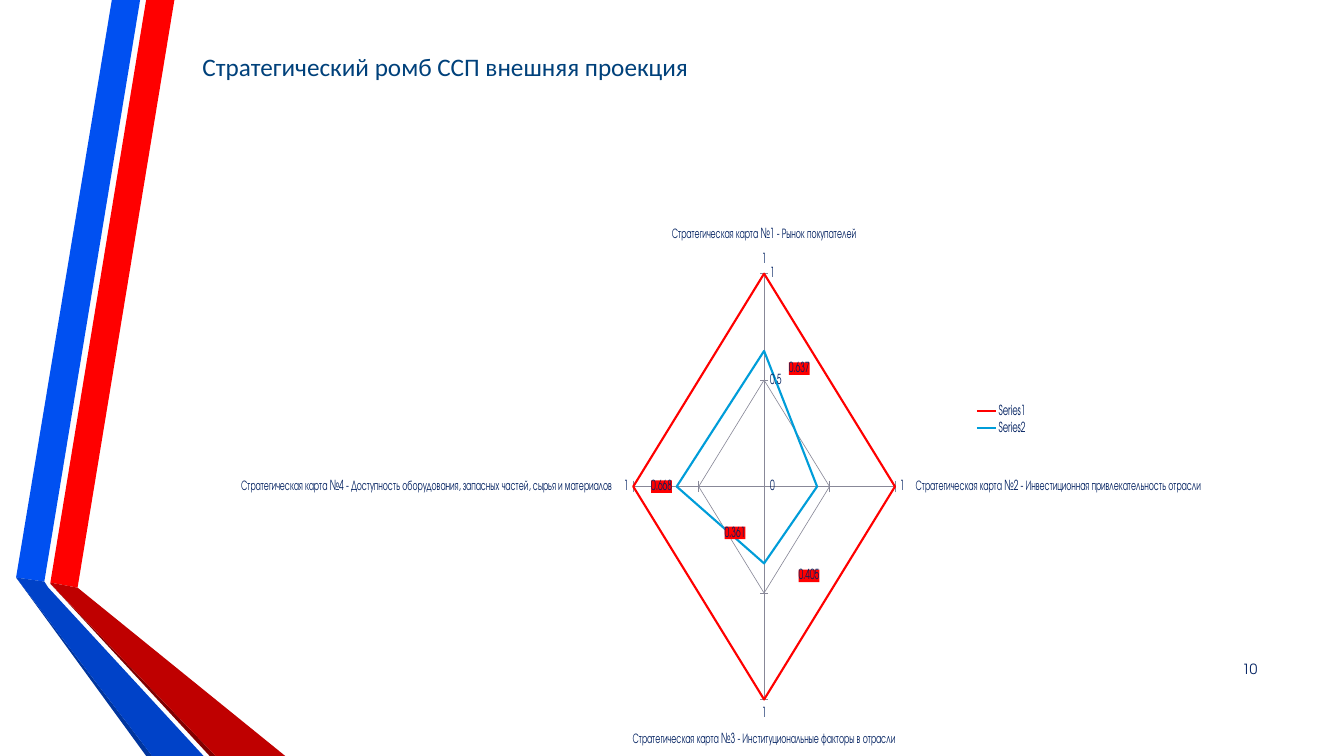
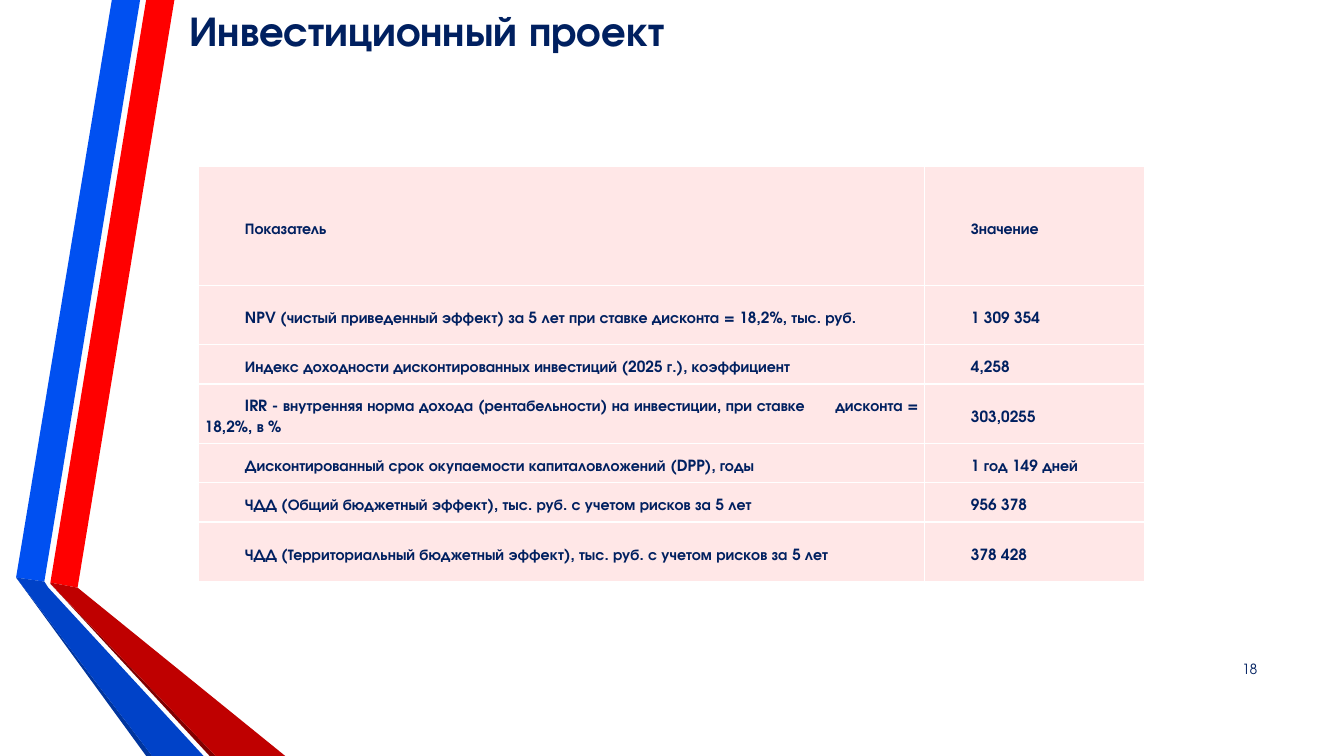
"""Build two slides: a strategic radar chart and an investment table."""
from copy import deepcopy

from pptx import Presentation
from pptx.chart.data import CategoryChartData
from pptx.dml.color import RGBColor
from pptx.enum.chart import XL_CHART_TYPE as ChartType
from pptx.enum.chart import XL_LEGEND_POSITION as LegendPosition
from pptx.enum.chart import XL_TICK_MARK as TickMark
from pptx.enum.text import MSO_ANCHOR as Anchor
from pptx.enum.text import PP_ALIGN as Align
from pptx.oxml import parse_xml
from pptx.oxml.ns import nsdecls, qn
from pptx.util import Inches, Pt

NAVY = RGBColor(0x00, 0x20, 0x60)
TITLE_BLUE = RGBColor(0x00, 0x41, 0x7B)
WHITE = RGBColor(0xFF, 0xFF, 0xFF)
PINK = RGBColor(0xFF, 0xE7, 0xE7)
GRID_GRAY = RGBColor(0x88, 0x88, 0x98)
RED = RGBColor(0xFF, 0x00, 0x00)
SKY = RGBColor(0x00, 0x9D, 0xD9)
BLUE = RGBColor(0x00, 0x50, 0xF1)
BLUE_EDGE = RGBColor(0x00, 0x35, 0x9E)
BLUE_FOLD = RGBColor(0x00, 0x42, 0xC8)
RED_EDGE = RGBColor(0x80, 0x00, 0x00)
RED_FOLD = RGBColor(0xBF, 0x00, 0x00)
FONT = "TeX Gyre Adventor"

RIBBONS = [
    (RED, [(0.5, 5.78), (0.77, 5.83), (1.73, 0), (1.45, 0)]),
    (BLUE, [(1.39, 0), (1.11, 0), (0.16, 5.73), (0.44, 5.77)]),
    (BLUE_EDGE, [(0.16, 5.73), (1.45, 7.5), (1.51, 7.5)]),
    (RED_EDGE, [(0.5, 5.79), (2.08, 7.5), (2.14, 7.5)]),
    (RED_FOLD, [(0.5, 5.79), (2.14, 7.5), (2.83, 7.5), (0.77, 5.83), (0.5, 5.78)]),
    (BLUE_FOLD, [(2.02, 7.5), (0.48, 5.83), (0.44, 5.77), (0.16, 5.73), (1.51, 7.5)]),
]

CATEGORIES = [
    "Стратегическая карта №1 - Рынок покупателей",
    "Стратегическая карта №2 - Инвестиционная привлекательность отрасли",
    "Стратегическая карта №3 - Институциональные факторы в отрасли",
    "Стратегическая карта №4 - Доступность оборудования, запасных частей, сырья и материалов",
]
SERIES = [
    ("Series1", RED, "General", [1, 1, 1, 1]),
    ("Series2", SKY, "0.000", [0.637, 0.405, 0.361, 0.668]),
]
PLOT_AREA = {"x": 0.315, "y": 0.236, "w": 0.448, "h": 0.79}
LABEL_OFFSETS = [(0.06, 0.05), (-0.04, 0.14), (-0.05, -0.07)]

COLUMN_WIDTHS = [7.2, 2.18]
ROW_UNIT = 0.59
TABLE_ROWS = [
    (2 * ROW_UNIT, "Показатель", "Значение"),
    (ROW_UNIT, "NPV (чистый приведенный эффект) за 5 лет при ставке дисконта = 18,2%, тыс. руб.",
     "1 309 354"),
    (0.39, "Индекс доходности дисконтированных инвестиций (2025 г.), коэффициент", "4,258"),
    (ROW_UNIT, "IRR - внутренняя норма дохода (рентабельности) на инвестиции, при ставке"
     "\tдисконта = 18,2%, в %", "303,0255"),
    (0.39, "Дисконтированный срок окупаемости капиталовложений (DPP), годы", "1 год 149 дней"),
    (0.39, "ЧДД (Общий бюджетный эффект), тыс. руб. с учетом рисков за 5 лет", "956 378"),
    (ROW_UNIT, "ЧДД (Территориальный бюджетный эффект), тыс. руб. с учетом рисков за 5 лет",
     "378 428"),
]
WIDE_GAP = 18


def write_text(frame, text, size=11, font=FONT, color=NAVY, bold=False,
               align=Align.LEFT, anchor=Anchor.TOP, spacing=None, indent=0):
    frame.word_wrap = True
    frame.vertical_anchor = anchor
    paragraph = frame.paragraphs[0]
    paragraph.alignment = align
    if spacing:
        paragraph.line_spacing = spacing
    if indent:
        properties = paragraph._p.get_or_add_pPr()
        properties.set("marL", "0")
        properties.set("indent", str(Inches(indent)))
    before, gap, after = text.partition("\t")
    for part in filter(None, (before, gap, after)):
        run = paragraph.add_run()
        run.text = part.replace("\t", " ")
        run.font.name = font
        run.font.size = Pt(size)
        run.font.bold = bold
        run.font.color.rgb = color
        if part == "\t":
            run._r.get_or_add_rPr().set("spc", str(WIDE_GAP * 100))


def add_text(slide, text, box, **text_format):
    shape = slide.shapes.add_textbox(*map(Inches, box))
    write_text(shape.text_frame, text, **text_format)


def add_slide(presentation, title, title_box, number, **title_format):
    slide = presentation.slides.add_slide(presentation.slide_layouts[6])
    for color, points in RIBBONS:
        start, *corners = [(Inches(x), Inches(y)) for x, y in points]
        builder = slide.shapes.build_freeform(*start)
        builder.add_line_segments(corners, close=True)
        shape = builder.convert_to_shape()
        shape.shadow.inherit = False
        shape.fill.solid()
        shape.fill.fore_color.rgb = color
        shape.line.fill.background()
    add_text(slide, title, title_box, **title_format)
    add_text(slide, number, (11.97, 6.44, 0.6, 0.4), size=10,
             align=Align.RIGHT, anchor=Anchor.MIDDLE)
    return slide


def manual_layout(values, inner=False):
    target = '<c:layoutTarget val="inner"/>' if inner else ""
    modes = '<c:xMode val="edge"/><c:yMode val="edge"/>' if inner else ""
    sizes = "".join(f'<c:{key} val="{value}"/>' for key, value in values.items())
    return parse_xml(f'<c:layout {nsdecls("c")}><c:manualLayout>{target}{modes}{sizes}'
                     '</c:manualLayout></c:layout>')


def highlight_labels(labels):
    label_list = labels._element
    label_list.find(qn("c:txPr")).addprevious(parse_xml(
        f'<c:spPr {nsdecls("c", "a")}><a:solidFill><a:srgbClr val="{RED}"/>'
        '</a:solidFill></c:spPr>'))
    for leader in label_list.findall(qn("c:showLeaderLines")):
        label_list.remove(leader)
    shared = list(label_list)
    label_list.append(parse_xml(f'<c:showLeaderLines {nsdecls("c")} val="0"/>'))
    extension_space = "http://schemas.microsoft.com/office/drawing/2012/chart"
    label_list.append(parse_xml(
        f'<c:extLst {nsdecls("c")}><c:ext uri="{{CE6537A1-D6FC-4f65-9D91-7224C49458BB}}">'
        f'<c15:showLeaderLines xmlns:c15="{extension_space}" val="0"/></c:ext></c:extLst>'))
    for index, (x, y) in enumerate(LABEL_OFFSETS):
        label = parse_xml(f'<c:dLbl {nsdecls("c")}><c:idx val="{index}"/></c:dLbl>')
        label.append(manual_layout({"x": x, "y": y}))
        label.extend(deepcopy(part) for part in shared)
        label_list.insert(index, label)


def style_font(font):
    font.name = FONT
    font.size = Pt(10)
    font.color.rgb = NAVY


def add_radar(slide):
    data = CategoryChartData()
    data.categories = CATEGORIES
    for name, _, _, values in SERIES:
        data.add_series(name, values)
    box = map(Inches, (2.39, 1, 9.54, 6.4))
    chart = slide.shapes.add_chart(ChartType.RADAR, *box, data).chart
    style_font(chart.font)
    chart.has_title = False
    chart.has_legend = True
    chart.legend.position = LegendPosition.RIGHT
    chart.legend.include_in_layout = False
    style_font(chart.legend.font)
    chart.plots[0].vary_by_categories = False

    plot_area = chart._chartSpace.chart.plotArea
    for layout in plot_area.findall(qn("c:layout")):
        plot_area.remove(layout)
    plot_area.insert(0, manual_layout(PLOT_AREA, inner=True))

    ticks = (TickMark.OUTSIDE, TickMark.CROSS)
    for axis, tick in zip((chart.category_axis, chart.value_axis), ticks):
        axis.major_tick_mark = tick
        axis.has_major_gridlines = True
        for line in (axis.major_gridlines.format.line, axis.format.line):
            line.color.rgb = GRID_GRAY
            line.width = Pt(0.75)
        style_font(axis.tick_labels.font)
    chart.value_axis.minimum_scale = 0
    chart.value_axis.maximum_scale = 1
    chart.value_axis.major_unit = 0.5
    chart.value_axis.tick_labels.number_format = "General"
    chart.value_axis.tick_labels.number_format_is_linked = False

    for series, (_, color, number_format, _) in zip(chart.plots[0].series, SERIES):
        series.smooth = False
        series.format.line.color.rgb = color
        series.format.line.width = Pt(2.5)
        labels = series.data_labels
        labels.show_value = True
        labels.number_format = number_format
        labels.number_format_is_linked = False
        style_font(labels.font)
    highlight_labels(labels)


def style_cell(cell):
    cell.fill.solid()
    cell.fill.fore_color.rgb = PINK
    cell.margin_left = cell.margin_right = Inches(0.06)
    cell.margin_top = Inches(0.01)
    cell.margin_bottom = 0
    cell.vertical_anchor = Anchor.MIDDLE
    properties = cell._tc.get_or_add_tcPr()
    for index, side in enumerate(("lnL", "lnR", "lnT", "lnB")):
        properties.insert(index, parse_xml(
            f'<a:{side} {nsdecls("a")} w="{Pt(1)}"><a:solidFill>'
            f'<a:srgbClr val="{WHITE}"/></a:solidFill></a:{side}>'))


def add_indicator_table(slide):
    heights = [row[0] for row in TABLE_ROWS]
    box = (1.97, 1.65, sum(COLUMN_WIDTHS), sum(heights))
    table = slide.shapes.add_table(
        len(TABLE_ROWS), len(COLUMN_WIDTHS), *map(Inches, box)).table
    for column, width in zip(table.columns, COLUMN_WIDTHS):
        column.width = Inches(width)
    for row, (height, *texts) in zip(table.rows, TABLE_ROWS):
        row.height = Inches(height)
        for cell, text in zip(row.cells, texts):
            write_text(cell.text_frame, text, bold=True, align=Align.JUSTIFY,
                       anchor=None, spacing=1.5, indent=0.4)
            style_cell(cell)


def main():
    presentation = Presentation()
    presentation.slide_width = Inches(13.33)
    presentation.slide_height = Inches(7.5)
    radar_slide = add_slide(
        presentation, "Стратегический ромб ССП внешняя проекция", (1.91, 0.46, 10.47, 0.4),
        "10", size=18, font="Calibri", color=TITLE_BLUE, align=Align.JUSTIFY)
    add_radar(radar_slide)
    table_slide = add_slide(
        presentation, "Инвестиционный проект", (1.78, 0, 9.36, 0.61), "18", size=30, bold=True)
    add_indicator_table(table_slide)
    presentation.save("out.pptx")


if __name__ == "__main__":
    main()
